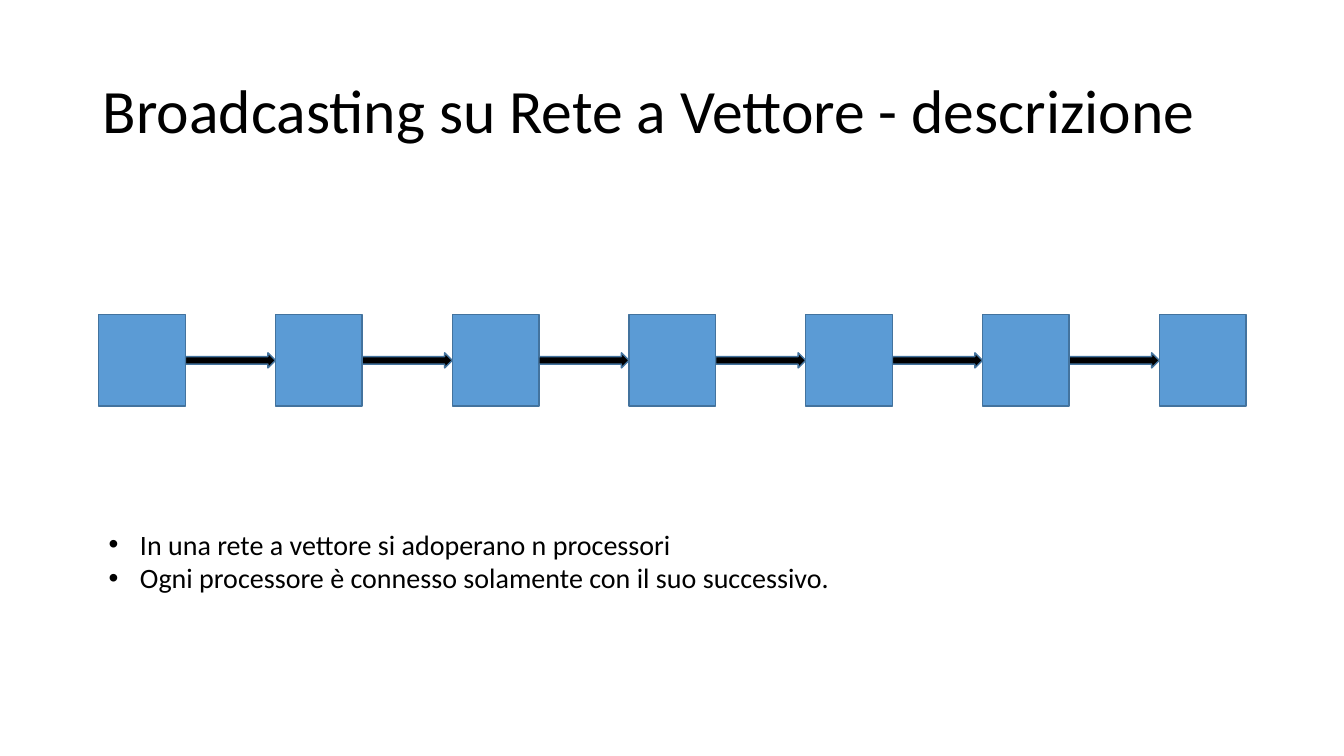
from lxml.etree import SubElement
from pptx import Presentation
from pptx.dml.color import RGBColor
from pptx.enum.shapes import MSO_SHAPE
from pptx.enum.text import MSO_ANCHOR, PP_ALIGN
from pptx.oxml.ns import qn
from pptx.util import Inches, Pt


def add_text(p, text, size=20, color="000000", font="Calibri", bullet=None, spacing=None):
    r = p.add_run()
    r.text = text
    r.font.size = Pt(size)
    r.font.name = font
    r.font.color.rgb = RGBColor.from_string(color)
    p.alignment = PP_ALIGN.LEFT
    if spacing:
        p.line_spacing = spacing
    if bullet:
        pPr = p._p.get_or_add_pPr()
        pPr.set("marL", str(Inches(0.31)))
        pPr.set("indent", str(Inches(-0.31)))
        SubElement(pPr, qn("a:buFont"), typeface="Arial")
        SubElement(pPr, qn("a:buChar"), char=bullet)


def add_box(shapes, kind, x, y, w, h, fill, line="43739E"):
    sp = shapes.add_shape(kind, Inches(x), Inches(y), Inches(w), Inches(h))
    sp.shadow.inherit = False
    sp.fill.solid()
    sp.fill.fore_color.rgb = RGBColor.from_string(fill)
    sp.line.color.rgb = RGBColor.from_string(line)
    sp.line.width = Pt(1)


prs = Presentation()
prs.slide_width, prs.slide_height = Inches(13.33), Inches(7.5)
s = prs.slides.add_slide(prs.slide_layouts[5])

# Title
title = s.shapes.title
title.left, title.top = Inches(0.92), Inches(0.4)
title.width, title.height = Inches(11.5), Inches(1.45)
tf = title.text_frame
tf.vertical_anchor = MSO_ANCHOR.MIDDLE
add_text(tf.paragraphs[0], "Broadcasting su Rete a Vettore - descrizione", size=44, spacing=0.9)

# Row of processors, each linked to the next
count, left, pitch = 7, 0.98, 1.753
width, height, top = 0.86, 0.91, 3.12
arrow_height = 0.15
network = s.shapes.add_group_shape()
for i in range(count):
    x = left + i * pitch
    add_box(network.shapes, MSO_SHAPE.RECTANGLE, x, top, width, height, "5B9BD5")
    if i < count - 1:
        add_box(network.shapes, MSO_SHAPE.RIGHT_ARROW, x + width,
                top + (height - arrow_height) / 2, pitch - width, arrow_height, "000000")

# Description
notes = ["In una rete a vettore si adoperano n processori",
         "Ogni processore è connesso solamente con il suo successivo."]
tf = s.shapes.add_textbox(Inches(0.98), Inches(5.18), Inches(7.42), Inches(0.77)).text_frame
tf.word_wrap = True
for i, note in enumerate(notes):
    p = tf.add_paragraph() if i else tf.paragraphs[0]
    add_text(p, note, bullet="•")

prs.save("out.pptx")
